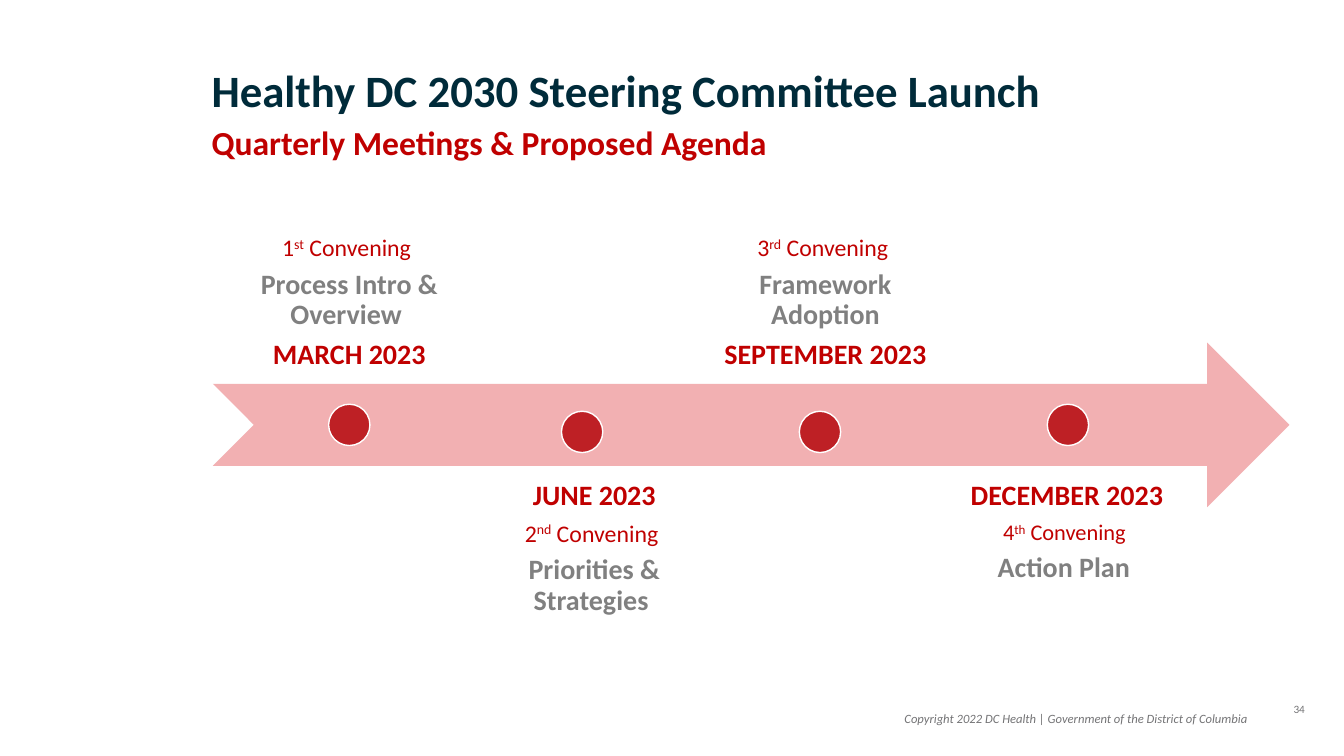
import pptx
import pptx.util
import pptx.dml.color
import pptx.enum.shapes
import pptx.enum.text

Pt = pptx.util.Pt
RGBColor = pptx.dml.color.RGBColor
SHAPE = pptx.enum.shapes.MSO_SHAPE
ALIGN = pptx.enum.text.PP_ALIGN
ANCHOR = pptx.enum.text.MSO_ANCHOR

NAVY = RGBColor(0x00, 0x2B, 0x3A)
RED = RGBColor(0xC0, 0x00, 0x00)
DOT_RED = RGBColor(0xBE, 0x20, 0x25)
PINK = RGBColor(0xF2, 0xB0, 0xB2)
GRAY = RGBColor(0x80, 0x80, 0x80)
FOOTER_GRAY = RGBColor(0x74, 0x74, 0x76)
WHITE = RGBColor(0xFF, 0xFF, 0xFF)

# text, (left, top, width, height), alignment, line spacing, font format
LABELS = [
    ("34", (900.7, 498.2, 54.7, 28.8), ALIGN.CENTER, 1.0,
     {"size": Pt(8), "color": FOOTER_GRAY}),
    ("Healthy DC 2030 Steering Committee Launch", (144, 45.4, 749.5, 44.6),
     ALIGN.LEFT, 0.9, {"size": Pt(32), "color": NAVY, "bold": True}),
    ("Quarterly Meetings & Proposed Agenda", (144, 87.1, 749.5, 25.9),
     ALIGN.LEFT, 0.9, {"size": Pt(24), "color": RED, "bold": True}),
    ("Copyright 2022 DC Health | Government of the District of Columbia",
     (506.2, 504, 391.7, 26.6), ALIGN.RIGHT, 1.0,
     {"size": Pt(9), "color": FOOTER_GRAY, "italic": True}),
]

# month, number, ordinal, convening size, topic, text left, text width, dot centre x, dot drop
MEETINGS = [
    ("MARCH 2023", "1", "st", 17, "Process Intro & Overview ", 152, 195, 249.5, 0),
    ("JUNE 2023", "2", "nd", 17, "Priorities & Strategies ", 351.4, 146.2, 415.8, 5),
    ("SEPTEMBER 2023", "3", "rd", 17, "Framework Adoption", 501.8, 175.7, 585.7, 5),
    ("DECEMBER 2023", "4", "th", 16, "Action Plan ", 681.1, 162, 762.8, 0),
]

ARROW_LEFT, ARROW_TOP, ARROW_WIDTH, ARROW_HEIGHT = 152, 244.8, 769, 117.4
AXIS_Y = ARROW_TOP + ARROW_HEIGHT / 2
DOT = 29.5
ABOVE_TOP, BELOW_TOP = 157, 332.6
SPACE_AFTER = 0.35


def add_run(p, text, style, baseline=None):
    r = p.add_run()
    r.text = text
    for key, value in {"name": "Calibri", **style}.items():
        if key == "color":
            r.font.color.rgb = value
        else:
            setattr(r.font, key, value)
    if baseline:
        r._r.get_or_add_rPr().set("baseline", str(baseline))


def add_box(s, box, **frame_format):
    tf = s.shapes.add_textbox(*map(Pt, box)).text_frame
    tf.word_wrap = True
    for key, value in frame_format.items():
        setattr(tf, key, value)
    return tf


def add_solid(s, kind, box, color):
    sp = s.shapes.add_shape(kind, *map(Pt, box))
    sp.shadow.inherit = False
    sp.fill.solid()
    sp.fill.fore_color.rgb = color
    sp.line.fill.background()
    return sp


def add_meeting(s, index, meeting):
    month, number, ordinal, size, topic, left, width, dot_x, drop = meeting
    above = index % 2 == 0
    bold = {"size": Pt(20), "bold": True}
    plain = {"size": Pt(size), "color": RED}
    month_line = (20, [(month, {**bold, "color": RED})])
    convening_line = (size, [(number, plain), (ordinal, plain, 30000),
                             (" Convening ", plain)])
    topic_line = (20, [(topic, {**bold, "color": GRAY})])
    if above:
        lines = [convening_line, topic_line, month_line]
    else:
        lines = [month_line, convening_line, topic_line]

    inset = Pt(9.6 if above else 11.4)
    tf = add_box(s, (left, ABOVE_TOP if above else BELOW_TOP, width, ARROW_HEIGHT),
                 vertical_anchor=ANCHOR.BOTTOM if above else ANCHOR.TOP,
                 margin_left=inset, margin_right=inset,
                 margin_top=inset, margin_bottom=inset)
    for i, (line_size, runs) in enumerate(lines):
        p = tf.add_paragraph() if i else tf.paragraphs[0]
        p.alignment = ALIGN.CENTER
        p.line_spacing = 0.9
        p.space_after = Pt(SPACE_AFTER * line_size)
        for run in runs:
            add_run(p, *run)

    dot = add_solid(s, SHAPE.OVAL,
                    (dot_x - DOT / 2, AXIS_Y + drop - DOT / 2, DOT, DOT), DOT_RED)
    dot.line.color.rgb = WHITE
    dot.line.width = Pt(1)


def main():
    prs = pptx.Presentation()
    prs.slide_width, prs.slide_height = Pt(960), Pt(540)
    s = prs.slides.add_slide(prs.slide_layouts[6])
    for text, box, alignment, spacing, style in LABELS:
        p = add_box(s, box).paragraphs[0]
        p.alignment = alignment
        p.line_spacing = spacing
        add_run(p, text, style)
    add_solid(s, SHAPE.NOTCHED_RIGHT_ARROW,
              (ARROW_LEFT, ARROW_TOP, ARROW_WIDTH, ARROW_HEIGHT), PINK)
    for index, meeting in enumerate(MEETINGS):
        add_meeting(s, index, meeting)
    prs.save("out.pptx")


if __name__ == "__main__":
    main()
